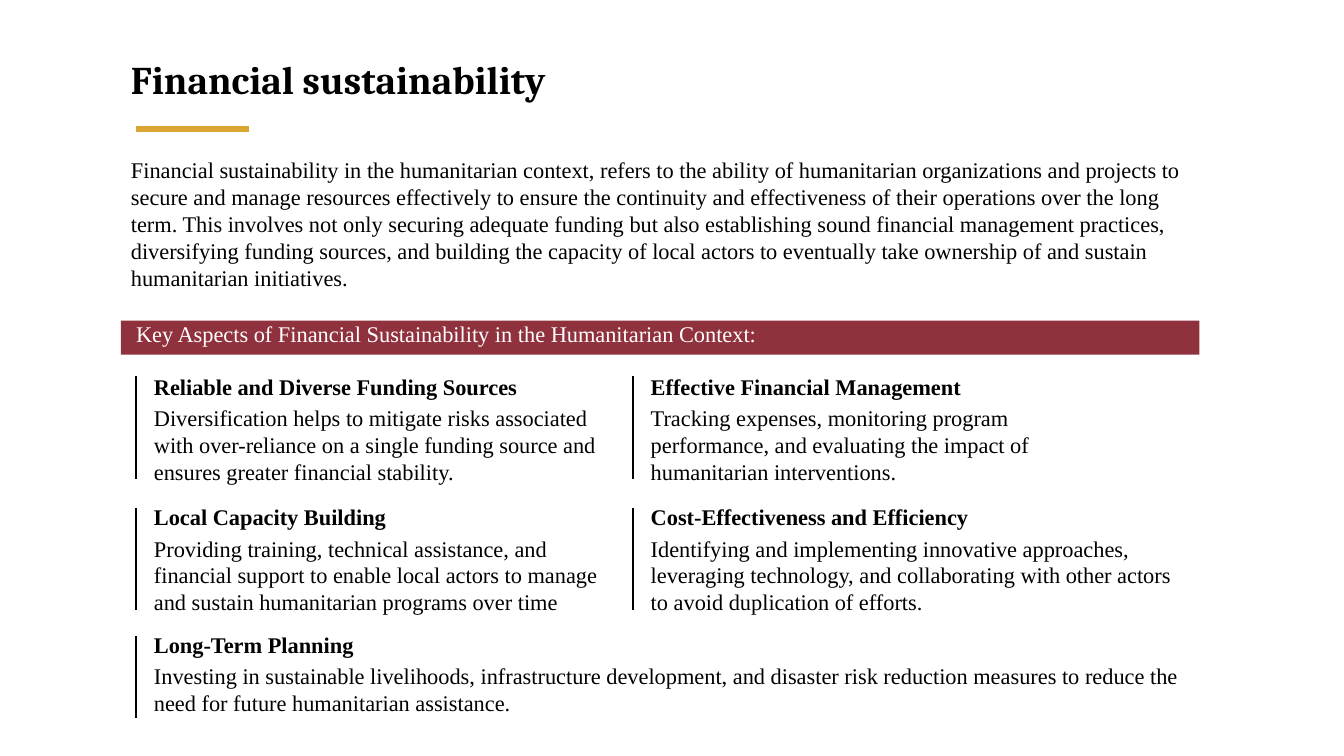
from dataclasses import dataclass

from lxml import etree
from pptx import Presentation
from pptx.dml.color import RGBColor
from pptx.enum.shapes import MSO_CONNECTOR, MSO_SHAPE
from pptx.enum.text import MSO_ANCHOR, MSO_AUTO_SIZE, PP_ALIGN
from pptx.oxml.ns import qn
from pptx.slide import Slide
from pptx.text.text import TextFrame
from pptx.util import Cm, Pt

STRAIGHT = MSO_CONNECTOR.STRAIGHT
RECTANGLE = MSO_SHAPE.RECTANGLE
TOP = MSO_ANCHOR.TOP
NO_AUTOFIT = MSO_AUTO_SIZE.NONE
LEFT = PP_ALIGN.LEFT

COLOURS = {"ink": "000000", "gold": "DAA531", "wine": "90323D", "paper": "FFFFFF"}
FRAME_FORMAT = {
    "word_wrap": True,
    "auto_size": NO_AUTOFIT,
    "vertical_anchor": TOP,
    "margin_left": Cm(0.25),
    "margin_right": Cm(0.25),
    "margin_top": Cm(0.13),
    "margin_bottom": Cm(0.13),
}
BODY_FORMAT = {"name": "Times New Roman", "size": Pt(16), "bold": False}
HEADING_FORMAT = {**BODY_FORMAT, "bold": True}
TITLE_FORMAT = {"name": "Cambria", "size": Pt(28), "bold": True}

MARGIN = 3.05
CONTENT_WIDTH = 27.18
COLUMNS = (3.43, 15.95)
ASPECT_INSET = 0.2


@dataclass(frozen=True)
class Box:
    left: float
    top: float
    width: float
    height: float

    def lengths(self) -> tuple[Cm, Cm, Cm, Cm]:
        return Cm(self.left), Cm(self.top), Cm(self.width), Cm(self.height)


@dataclass(frozen=True)
class Row:
    top: float
    height: float
    text_top: float
    text_height: float


@dataclass(frozen=True)
class Aspect:
    column: int
    row: Row
    width: float
    heading: str
    detail: str


UPPER = Row(9.47, 2.59, 9.27, 3.1)
MIDDLE = Row(12.8, 2.57, 12.56, 3.1)
LOWER = Row(16.03, 2.06, 15.77, 2.41)

ASPECTS = (
    Aspect(0, UPPER, 11.71, "Reliable and Diverse Funding Sources",
           "Diversification helps to mitigate risks associated with over-reliance on a "
           "single funding source and ensures greater financial stability."),
    Aspect(1, UPPER, 11.71, "Effective Financial Management",
           "Tracking expenses, monitoring program performance, and evaluating the impact "
           "of humanitarian interventions."),
    Aspect(0, MIDDLE, 12.14, "Local Capacity Building",
           "Providing training, technical assistance, and financial support to enable "
           "local actors to manage and sustain humanitarian programs over time"),
    Aspect(1, MIDDLE, 13.82, "Cost-Effectiveness and Efficiency",
           "Identifying and implementing innovative approaches, leveraging technology, "
           "and collaborating with other actors to avoid duplication of efforts."),
    Aspect(0, LOWER, CONTENT_WIDTH, "Long-Term Planning",
           "Investing in sustainable livelihoods, infrastructure development, and disaster "
           "risk reduction measures to reduce the need for future humanitarian assistance."),
)

INTRO = (
    "Financial sustainability in the humanitarian context, refers to the ability of "
    "humanitarian organizations and projects to secure and manage resources effectively "
    "to ensure the continuity and effectiveness of their operations over the long term. "
    "This involves not only securing adequate funding but also establishing sound "
    "financial management practices, diversifying funding sources, and building the "
    "capacity of local actors to eventually take ownership of and sustain humanitarian "
    "initiatives."
)


def colour(name: str) -> RGBColor:
    return RGBColor.from_string(COLOURS[name])


def apply_format(target: object, values: dict[str, object]) -> None:
    for attribute, value in values.items():
        setattr(target, attribute, value)


def write(frame: TextFrame, passages: list[tuple[str, dict[str, object]]], ink: str = "ink") -> None:
    apply_format(frame, FRAME_FORMAT)
    for index, (words, font_format) in enumerate(passages):
        paragraph = frame.add_paragraph() if index else frame.paragraphs[0]
        paragraph.alignment = LEFT
        paragraph.space_before = Pt(3 if index else 0)
        run = paragraph.add_run()
        run.text = words
        apply_format(run.font, font_format)
        run.font.color.rgb = colour(ink)


def add_text(slide: Slide, box: Box, passages: list[tuple[str, dict[str, object]]],
             ink: str = "ink") -> None:
    write(slide.shapes.add_textbox(*box.lengths()).text_frame, passages, ink)


def add_rule(slide: Slide, box: Box, ink: str, weight: float) -> None:
    left, top, width, height = box.lengths()
    rule = slide.shapes.add_connector(STRAIGHT, left, top, left + width, top + height)
    rule.line.color.rgb = colour(ink)
    rule.line.width = Pt(weight)
    etree.SubElement(rule.line._get_or_add_ln().getparent(), qn("a:effectLst"))


def add_title(slide: Slide) -> None:
    title = slide.shapes.title
    position = Box(MARGIN, 1.27, 26.52, 1.45).lengths()
    apply_format(title, dict(zip(("left", "top", "width", "height"), position)))
    write(title.text_frame, [("Financial sustainability", TITLE_FORMAT)])
    add_rule(slide, Box(COLUMNS[0], 3.25, 2.85, 0), "gold", 4.5)


def add_banner(slide: Slide) -> None:
    banner = slide.shapes.add_shape(RECTANGLE, *Box(MARGIN, 8.08, CONTENT_WIDTH, 0.86).lengths())
    banner.shadow.inherit = False
    banner.fill.solid()
    banner.fill.fore_color.rgb = colour("wine")
    banner.line.fill.background()
    heading = "Key Aspects of Financial Sustainability in the Humanitarian Context:"
    add_text(slide, Box(3.18, 7.95, 24.36, 0.94), [(heading, BODY_FORMAT)], "paper")


def add_aspect(slide: Slide, aspect: Aspect) -> None:
    left, row = COLUMNS[aspect.column], aspect.row
    add_rule(slide, Box(left, row.top, 0, row.height), "ink", 1.5)
    add_text(slide, Box(left + ASPECT_INSET, row.text_top, aspect.width, row.text_height),
             [(aspect.heading, HEADING_FORMAT), (aspect.detail, BODY_FORMAT)])


def main() -> None:
    presentation = Presentation()
    apply_format(presentation, {"slide_width": Cm(33.87), "slide_height": Cm(19.05)})
    title_only = presentation.slide_layouts.get_by_name("Title Only")
    slide = presentation.slides.add_slide(title_only)
    add_title(slide)
    add_text(slide, Box(MARGIN, 3.81, CONTENT_WIDTH, 3.68), [(INTRO, BODY_FORMAT)])
    add_banner(slide)
    for aspect in ASPECTS:
        add_aspect(slide, aspect)
    presentation.save("out.pptx")


if __name__ == "__main__":
    main()
